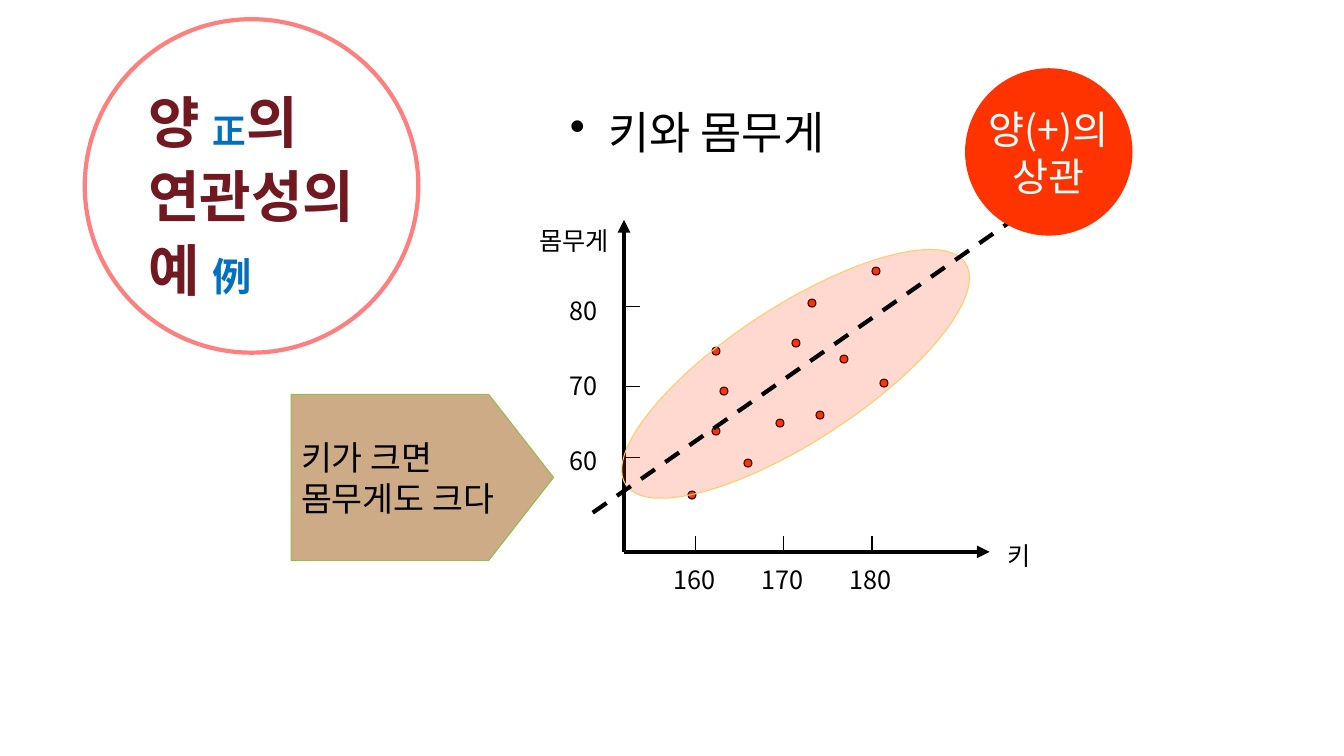
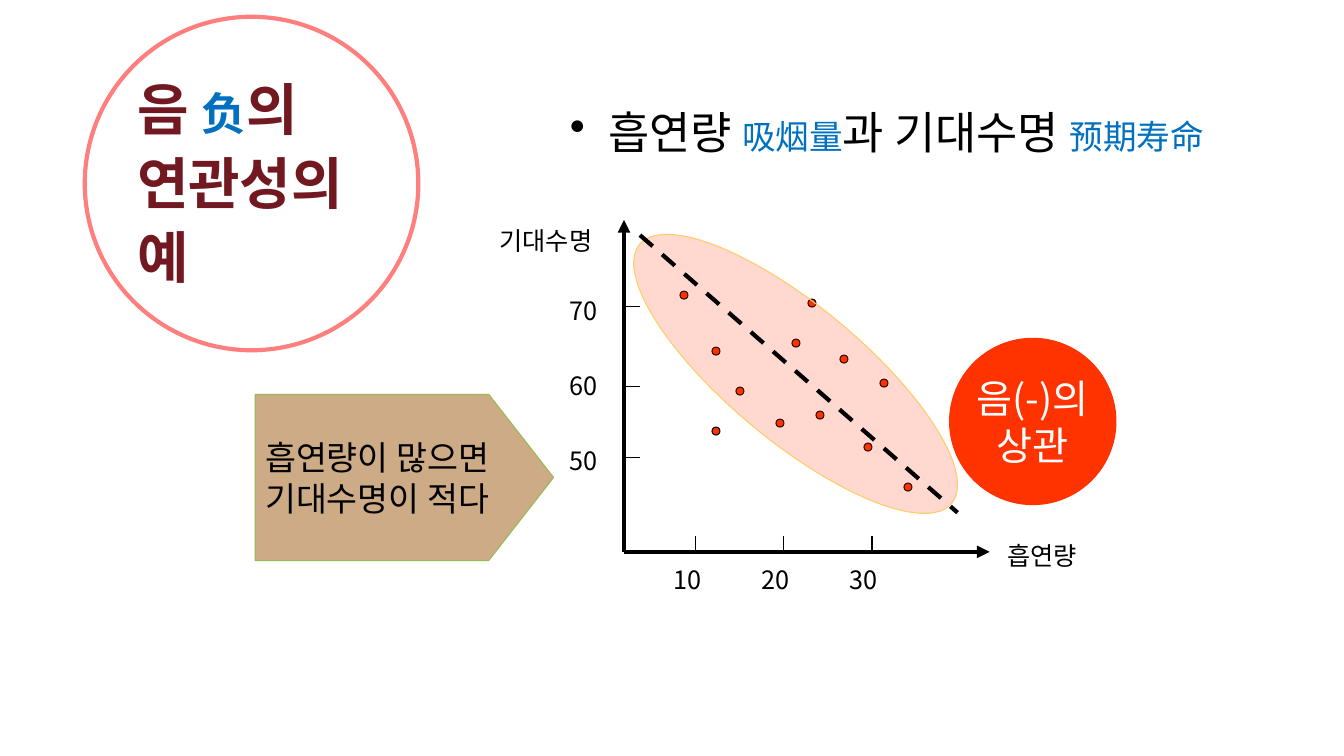
from lxml import etree
from pptx import Presentation
from pptx.dml.color import RGBColor
from pptx.enum.dml import MSO_LINE
from pptx.enum.shapes import MSO_CONNECTOR, MSO_SHAPE
from pptx.enum.text import MSO_ANCHOR, MSO_AUTO_SIZE, PP_ALIGN
from pptx.oxml.ns import qn
from pptx.util import Inches, Pt

ELLIPSE = MSO_SHAPE.OVAL
PENTAGON = MSO_SHAPE.PENTAGON
STRAIGHT = MSO_CONNECTOR.STRAIGHT
DASH = MSO_LINE.DASH
TOP, MIDDLE = MSO_ANCHOR.TOP, MSO_ANCHOR.MIDDLE
LEFT, CENTER = PP_ALIGN.LEFT, PP_ALIGN.CENTER
GROW = MSO_AUTO_SIZE.SHAPE_TO_FIT_TEXT

FONT = "Noto Sans CJK KR"
COLORS = {
    "ink": "000000",
    "title": "721821",
    "chinese": "0070C0",
    "ring": "FF0000",
    "accent": "FF3300",
    "cloud_edge": "FFCC66",
    "claim": "CCAB86",
    "claim_edge": "95BC50",
    "light": "FFFFFF",
}

# The slide is a grid of square cells, 168 columns wide
WIDTH, HEIGHT = 13.33, 7.5
CELL = WIDTH / 168

# Plot layout in cells
AXIS_COL, AXIS_ROW = 78, 69
AXIS_TOP, AXIS_RIGHT = 27.5, 123.7
TICK = 2
X_TICKS = (87, 98, 109)
Y_TICKS = (57.2, 48.3, 38.3)
X_LABEL_COL, X_LABEL_STEP = 83, 11
Y_LABEL_ROW, Y_LABEL_STEP = 55.1, -9.4
LABEL_HEIGHT = 5
DOT_TOP = 33.4
CLOUD = (74.1, 38.3, 50.7, 16.9)
CLAIM_RIGHT = 69.2
BADGE_SIZE = 20.8

# Dots as columns and rows from the corner of the plot
SHARED_DOTS = [(19, 19), (21, 9), (27, 11), (24, 18), (11, 20),
               (23, 4), (32, 14), (11, 10)]


def cells(*values):
    return [Inches(value * CELL) for value in values]


def rgb(name):
    return RGBColor.from_string(COLORS[name])


def set_alpha(color_format, percent):
    """Add transparency to a solid fill."""
    color = color_format._xPr.find(qn("a:solidFill"))[0]
    etree.SubElement(color, qn("a:alpha")).set("val", str(percent * 1000))


def write(frame, paragraphs, size=18, color="ink", bold=False, align=LEFT,
          anchor=TOP, wrap=True, spacing=None, bullet=False):
    """Fill a frame; each paragraph is a list of texts or (text, size) in Chinese blue."""
    frame.word_wrap = wrap
    frame.vertical_anchor = anchor
    for index, parts in enumerate(paragraphs):
        paragraph = frame.paragraphs[0] if index == 0 else frame.add_paragraph()
        paragraph.alignment = align
        paragraph.line_spacing = spacing
        if bullet:
            props = paragraph._p.get_or_add_pPr()
            props.set("marL", str(Inches(0.38)))
            props.set("indent", str(-Inches(0.38)))
            etree.SubElement(props, qn("a:buChar")).set("char", "•")
        for part in parts:
            text, points, tint = ((part, size, color) if isinstance(part, str)
                                  else (*part, "chinese"))
            for number, line in enumerate(text.split("\n")):
                if number:
                    paragraph.add_line_break()
                if line:
                    add_run(paragraph, line, points, tint, bold)


def add_run(paragraph, text, size, color, bold):
    run = paragraph.add_run()
    run.text = text
    run.font.size = Pt(size)
    run.font.bold = bold
    run.font.color.rgb = rgb(color)
    run.font.name = FONT
    east_asian = etree.Element(qn("a:ea"))
    east_asian.set("typeface", FONT)
    run._r.rPr.find(qn("a:latin")).addnext(east_asian)


def add_text(slide, box, paragraphs, grow=False, **style):
    frame = slide.shapes.add_textbox(*cells(*box)).text_frame
    write(frame, paragraphs, wrap=not grow, **style)
    if grow:
        frame.auto_size = GROW


def add_label(slide, col, row, width, text):
    add_text(slide, (col, row, width, LABEL_HEIGHT), [[text]], grow=True)


def add_figure(slide, kind, box, fill=None, line="ink", width=0.75,
               fill_alpha=None, line_alpha=None):
    figure = slide.shapes.add_shape(kind, *cells(*box))
    figure.shadow.inherit = False
    if fill:
        figure.fill.solid()
        figure.fill.fore_color.rgb = rgb(fill)
    else:
        figure.fill.background()
    figure.line.color.rgb = rgb(line)
    figure.line.width = Pt(width)
    if fill_alpha:
        set_alpha(figure.fill, fill_alpha)
    if line_alpha:
        set_alpha(figure.line.fill, line_alpha)
    return figure


def add_line(slide, start, end, width=0.75, dash=None, arrow=False):
    line = slide.shapes.add_connector(STRAIGHT, *cells(*start, *end))
    line.line.color.rgb = rgb("ink")
    line.line.width = Pt(width)
    if dash:
        line.line.dash_style = dash
    if arrow:
        tail = etree.SubElement(line.line._get_or_add_ln(), qn("a:tailEnd"))
        tail.set("type", "triangle")
    etree.SubElement(line._element.spPr, qn("a:effectLst"))


def add_title(slide, ring_row, corner, parts):
    add_figure(slide, ELLIPSE, (10.6, ring_row, 41.7, 41.7),
               line="ring", width=3, line_alpha=50)
    add_text(slide, (*corner, 31.9, 28.6), [parts], size=40, color="title",
             bold=True, anchor=MIDDLE, spacing=1.1)


def add_axes(slide, x_name, y_name, x_values, y_values):
    """x_name is (text, width), y_name is (text, column, width)."""
    origin = (AXIS_COL, AXIS_ROW)
    for end in ((AXIS_COL, AXIS_TOP), (AXIS_RIGHT, AXIS_ROW)):
        add_line(slide, origin, end, width=3, arrow=True)
    for col in X_TICKS:
        add_line(slide, (col, AXIS_ROW), (col, AXIS_ROW - TICK))
    for row in Y_TICKS:
        add_line(slide, (AXIS_COL, row), (AXIS_COL + TICK, row))

    name, width = x_name
    add_label(slide, 124.7, 67, width, name)
    name, col, width = y_name
    add_label(slide, col, AXIS_TOP, width, name)
    for index, value in enumerate(x_values):
        width = 2.7 + 1.7 * len(value)
        add_label(slide, X_LABEL_COL + index * X_LABEL_STEP, 70, width, value)
    for index, value in enumerate(y_values):
        add_label(slide, 70, Y_LABEL_ROW + index * Y_LABEL_STEP, 6.1, value)


def add_scatter(slide, dots, tilt, trend):
    for col, row in SHARED_DOTS + dots:
        add_figure(slide, ELLIPSE, (AXIS_COL + col, DOT_TOP + row, 1, 1), "accent")
    cloud = add_figure(slide, ELLIPSE, CLOUD, "accent", "cloud_edge", fill_alpha=19)
    cloud.rotation = tilt
    add_line(slide, *trend, width=3, dash=DASH)


def add_claim(slide, left, lines):
    claim = add_figure(slide, PENTAGON, (left, 49.3, CLAIM_RIGHT - left, 20.8),
                       "claim", "claim_edge")
    claim.adjustments[0] = 0.39
    write(claim.text_frame, [[line] for line in lines], size=24,
          anchor=MIDDLE, wrap=False)


def add_badge(slide, corner, lines):
    badge = add_figure(slide, ELLIPSE, (*corner, BADGE_SIZE, BADGE_SIZE),
                       "accent", "accent")
    write(badge.text_frame, [[line] for line in lines], size=28, color="light",
          align=CENTER, anchor=MIDDLE, wrap=False)


def add_topic(slide, width, parts):
    add_text(slide, (70, 12.5, width, 12), [parts], size=32, bullet=True)


def build_positive(slide):
    add_topic(slide, 69.5, ["키와 몸무게"])
    add_title(slide, 2.4, (17.3, 9.7),
              ["양 ", ("正", 24), "의\n연관성의\n예 ", ("例", 28)])
    add_axes(slide, ("키", 5.7), ("몸무게", 66.2, 12.1),
             ("160", "170", "180"), ("60", "70", "80"))
    add_scatter(slide, [(31, 0), (8, 28), (12, 15), (15, 24)], -33.1,
                ((74.1, 64.1), (126.6, 27.5)))
    add_claim(slide, 36.4, ["키가 크면", "몸무게도 크다"])
    add_badge(slide, (120.7, 8.6), ["양(+)의", "상관"])


def build_negative(slide):
    add_topic(slide, 84.3, ["흡연량 ", ("吸烟量", 24), "과 기대수명 ", ("预期寿命", 24)])
    add_title(slide, 2.1, (15.9, 8.1), ["음 ", ("负", 32), "의\n연관성의\n예"])
    add_axes(slide, ("흡연량", 12.1), ("기대수명", 61.2, 15.2),
             ("10", "20", "30"), ("50", "60", "70"))
    add_scatter(slide, [(30, 22), (7, 3), (14, 15), (35, 27)], 39.7,
                ((80, 29.4), (119.7, 64.1)))
    add_claim(slide, 31.9, ["흡연량이 많으면", "기대수명이 적다"])
    add_badge(slide, (118.7, 42.3), ["음(-)의", "상관"])


def main():
    deck = Presentation()
    deck.slide_width, deck.slide_height = Inches(WIDTH), Inches(HEIGHT)
    blank = deck.slide_layouts[6]
    for build in (build_positive, build_negative):
        build(deck.slides.add_slide(blank))
    deck.save("out.pptx")


if __name__ == "__main__":
    main()
